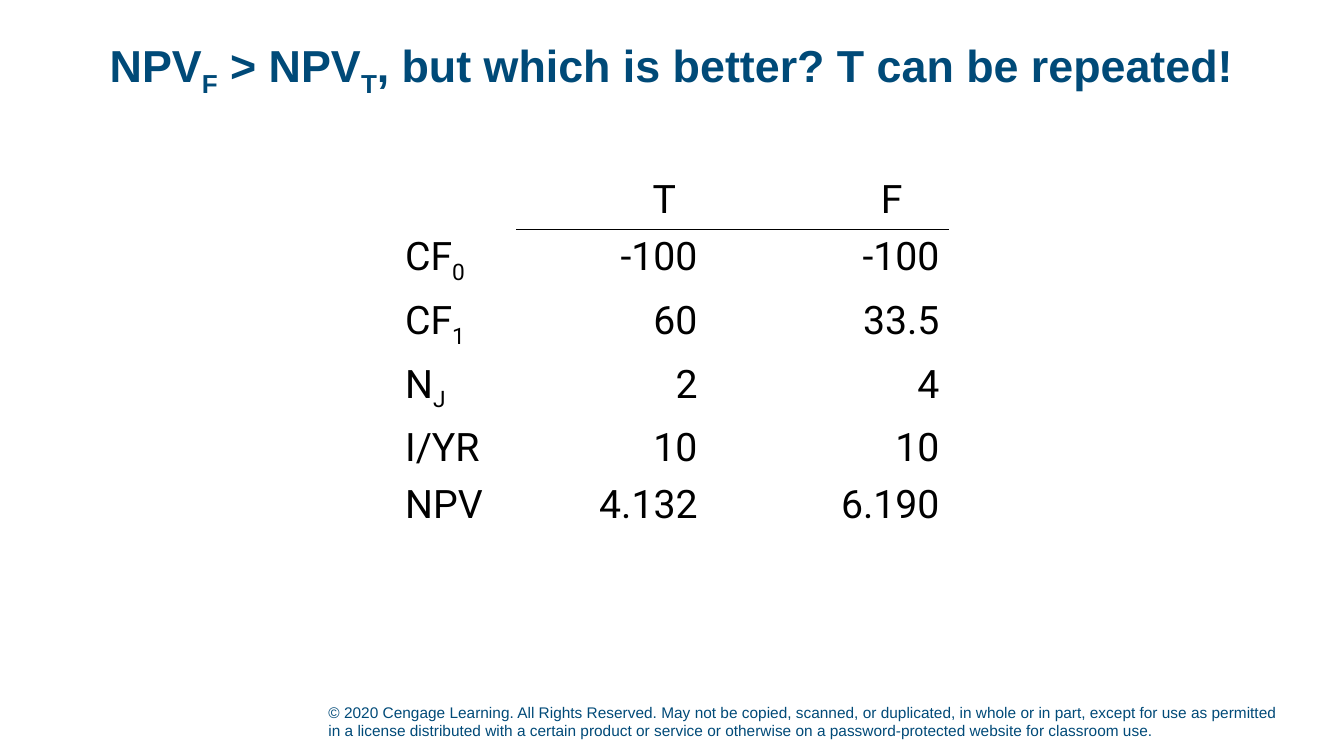
from lxml import etree
from pptx import Presentation
from pptx.dml.color import RGBColor
from pptx.enum.text import MSO_ANCHOR, PP_ALIGN
from pptx.oxml import parse_xml
from pptx.oxml.ns import nsdecls, qn
from pptx.util import Pt

NAVY = RGBColor(0x00, 0x4A, 0x78)
BLACK = RGBColor(0x00, 0x00, 0x00)

TITLE_FONT = {"name": "Arial", "size": Pt(32), "bold": True}
TABLE_FONT = {"name": "Roboto", "size": Pt(28), "bold": False}
COPYRIGHT_FONT = {"name": "Arial", "size": Pt(11), "bold": False}

TITLE = ("NPV", "F", " > NPV", "T", ", but which is better? T can be repeated!")
COPYRIGHT = (
    "© 2020 Cengage Learning. All Rights Reserved. May not be copied, scanned, "
    "or duplicated, in whole or in part, except for use as permitted in a license "
    "distributed with a certain product or service or otherwise on a "
    "password-protected website for classroom use."
)
PROJECT_ROWS = [
    ((), ("T",), ("F",)),
    (("CF", "0"), ("-100",), ("-100",)),
    (("CF", "1"), ("60",), ("33.5",)),
    (("N", "J"), ("2",), ("4",)),
    (("I/YR",), ("10",), ("10",)),
    (("NPV",), ("4.132",), ("6.190",)),
]
COLUMN_WIDTHS = (86.4, 136.8, 172.8)
ROW_HEIGHTS = (38, 45.5, 44, 37.5, 38, 38)
HEADING_INSETS = (0, 22.5, 33.5)
NO_TABLE_STYLE = "{2D5ABB26-0587-4C30-8999-92F81FD0307C}"


def write_parts(paragraph, parts, font_values, color, align):
    """Write parts in turn as normal text and subscript."""
    paragraph.alignment = align
    for index, part in enumerate(parts):
        run = paragraph.add_run()
        run.text = part
        for attribute, value in font_values.items():
            setattr(run.font, attribute, value)
        run.font.color.rgb = color
        if index % 2:
            run._r.get_or_add_rPr().set("baseline", "-25000")


def place(shape, left, top, width, height):
    bounds = {"left": left, "top": top, "width": width, "height": height}
    for attribute, value in bounds.items():
        setattr(shape, attribute, Pt(value))


def add_title(slide):
    title = slide.shapes.title
    place(title, 66, 11, 828, 72)
    frame = title.text_frame
    frame.word_wrap = True
    frame.vertical_anchor = MSO_ANCHOR.MIDDLE
    paragraph = frame.paragraphs[0]
    paragraph.line_spacing = 0.9
    write_parts(paragraph, TITLE, TITLE_FONT, NAVY, PP_ALIGN.CENTER)


def add_copyright(slide):
    notice = slide.shapes.add_textbox(Pt(227.5), Pt(496), Pt(693.5), Pt(36))
    frame = notice.text_frame
    frame.word_wrap = True
    frame.vertical_anchor = MSO_ANCHOR.BOTTOM
    write_parts(frame.paragraphs[0], (COPYRIGHT,), COPYRIGHT_FONT, NAVY, PP_ALIGN.LEFT)


def underline_cell(cell):
    border = parse_xml(f'<a:lnB {nsdecls("a")} w="{Pt(1)}"/>')
    fill = etree.SubElement(border, qn("a:solidFill"))
    etree.SubElement(fill, qn("a:srgbClr"), val=str(BLACK))
    cell._tc.get_or_add_tcPr().insert(0, border)


def add_project_table(slide):
    frame = slide.shapes.add_table(
        len(PROJECT_ROWS), len(COLUMN_WIDTHS), Pt(282.2), Pt(123),
        Pt(sum(COLUMN_WIDTHS)), Pt(sum(ROW_HEIGHTS)),
    )
    table = frame.table
    table.first_row = table.horz_banding = False
    table._tbl.tblPr.find(qn("a:tableStyleId")).text = NO_TABLE_STYLE
    for column, width in zip(table.columns, COLUMN_WIDTHS):
        column.width = Pt(width)
    for row, height in zip(table.rows, ROW_HEIGHTS):
        row.height = Pt(height)

    for row_index, entries in enumerate(PROJECT_ROWS):
        for column_index, parts in enumerate(entries):
            cell = table.cell(row_index, column_index)
            cell.fill.background()
            align = PP_ALIGN.RIGHT if column_index else PP_ALIGN.LEFT
            paragraph = cell.text_frame.paragraphs[0]
            paragraph.font.size = TABLE_FONT["size"]
            write_parts(paragraph, parts, TABLE_FONT, BLACK, align)
            if row_index == 0 and column_index:
                cell.margin_right = Pt(HEADING_INSETS[column_index])
                underline_cell(cell)


def main():
    presentation = Presentation()
    presentation.slide_width = Pt(960)
    presentation.slide_height = Pt(540)
    slide = presentation.slides.add_slide(presentation.slide_layouts[5])
    add_copyright(slide)
    add_title(slide)
    add_project_table(slide)
    presentation.save("out.pptx")


if __name__ == "__main__":
    main()
